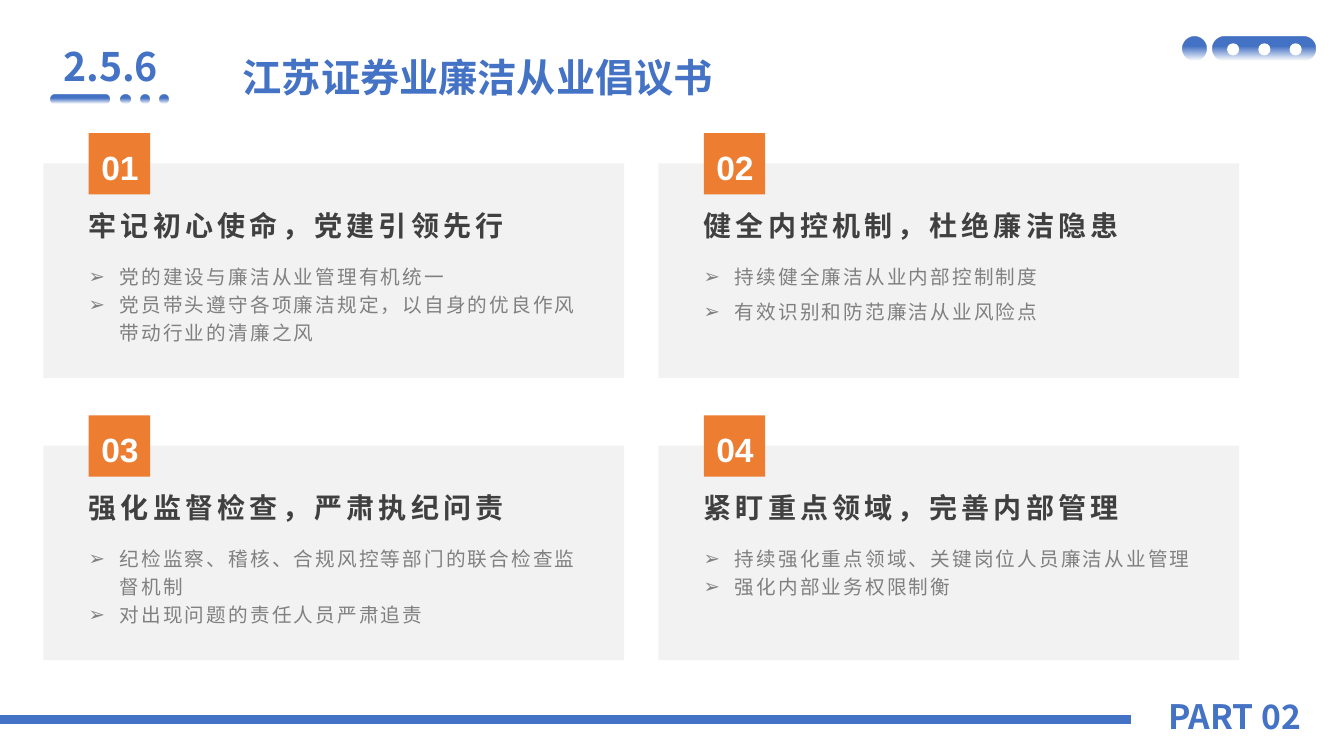
from lxml.etree import SubElement
from pptx import Presentation
from pptx.dml.color import RGBColor
from pptx.enum.shapes import MSO_CONNECTOR, MSO_SHAPE
from pptx.enum.text import MSO_ANCHOR, MSO_AUTO_SIZE, PP_ALIGN
from pptx.oxml.ns import qn
from pptx.util import Inches, Pt

BLUE = RGBColor(0x44, 0x72, 0xC4)
ORANGE = RGBColor(0xED, 0x7D, 0x31)
PALE = RGBColor(0xF2, 0xF2, 0xF2)
DARK = RGBColor(0x40, 0x40, 0x40)
GRAY = RGBColor(0x80, 0x80, 0x80)
WHITE = RGBColor(0xFF, 0xFF, 0xFF)
SANS = "Noto Sans CJK SC"

GROW = {"auto_size": MSO_AUTO_SIZE.SHAPE_TO_FIT_TEXT}
LOOSE = {**GROW, "word_wrap": False}
HEAD = {"vertical_anchor": MSO_ANCHOR.BOTTOM, "margin_bottom": 0}
BODY = {"margin_top": 0}
TIGHT = {"line_spacing": 1.1}
MID = {"line_spacing": 1.1, "alignment": PP_ALIGN.CENTER}
ITEM = {"line_spacing": 1.2}
LAST = {"line_spacing": 1.5, "space_after": Pt(10)}

CARDS = [
    ("牢记初心使命，党建引领先行",
     [("党的建设与廉洁从业管理有机统一", ITEM),
      ("党员带头遵守各项廉洁规定，以自身的优良作风带动行业的清廉之风", ITEM)]),
    ("健全内控机制，杜绝廉洁隐患",
     [("持续健全廉洁从业内部控制制度", ITEM),
      ("有效识别和防范廉洁从业风险点", LAST)]),
    ("强化监督检查，严肃执纪问责",
     [("纪检监察、稽核、合规风控等部门的联合检查监督机制", ITEM),
      ("对出现问题的责任人员严肃追责", ITEM)]),
    ("紧盯重点领域，完善内部管理",
     [("持续强化重点领域、关键岗位人员廉洁从业管理", ITEM),
      ("强化内部业务权限制衡", ITEM)]),
]


def apply(item, form):
    for name, value in form.items():
        setattr(item, name, value)


class Deck:
    """Draws styled elements on the current slide."""

    def __init__(self):
        self.show = Presentation()
        apply(self.show, {"slide_width": Inches(13.33), "slide_height": Inches(7.5)})
        self.slide = self.show.slides.add_slide(self.show.slide_layouts[6])

    def shape(self, kind, place, color=None):
        shape = self.slide.shapes.add_shape(kind, *map(Inches, place))
        shape.shadow.inherit = False
        shape.line.fill.background()
        if kind == MSO_SHAPE.ROUNDED_RECTANGLE:
            shape.adjustments[0] = 0.5
        if color is None:
            self.fade(shape)
        else:
            shape.fill.solid()
            shape.fill.fore_color.rgb = color

    def fade(self, shape):
        shape.fill.gradient()
        shape.fill.gradient_angle = 270
        for stop, spot in zip(shape.fill.gradient_stops, (0.4, 1)):
            stop.color.rgb = BLUE
            stop.position = spot
        tint = shape.fill._xPr.findall(".//" + qn("a:srgbClr"))[-1]
        SubElement(tint, qn("a:alpha"), val="0")

    def line(self, start, end, color, width):
        line = self.slide.shapes.add_connector(
            MSO_CONNECTOR.STRAIGHT, *map(Inches, start + end))
        line.line.color.rgb = color
        line.line.width = Pt(width)
        SubElement(line._element.spPr, qn("a:effectLst"))

    def text(self, place, lines, size, color, face="Arial", bold=True,
             frame={}, gap=0, mark=None):
        box = self.slide.shapes.add_textbox(*map(Inches, place)).text_frame
        apply(box, {"word_wrap": True, **frame})
        for rank, (words, form) in enumerate(lines):
            para = box.add_paragraph() if rank else box.paragraphs[0]
            apply(para, form)
            if mark:
                self.bullet(para, mark)
            run = para.add_run()
            run.text = words
            apply(run.font, {"size": Pt(size), "bold": bold, "name": face})
            run.font.color.rgb = color
            props = run._r.get_or_add_rPr()
            SubElement(props, qn("a:ea"), typeface=SANS)
            if gap:
                props.set("spc", str(int(gap * 100)))

    def bullet(self, para, mark):
        props = para._p.get_or_add_pPr()
        props.set("marL", str(Inches(0.31)))
        props.set("indent", str(-Inches(0.31)))
        SubElement(props, qn("a:buFont"), typeface="Arial")
        SubElement(props, qn("a:buChar"), char=mark)

    def card(self, left, top, label, head, items):
        self.shape(MSO_SHAPE.RECTANGLE, (left, top, 5.76, 2.13), PALE)
        self.shape(MSO_SHAPE.RECTANGLE, (left + 0.45, top - 0.3, 0.61, 0.61), ORANGE)
        self.text((left + 0.47, top - 0.25, 0.58, 0.54), [(label, MID)], 24, WHITE)
        self.text((left + 0.35, top + 0.96, 5.06, 1.06), items, 14, GRAY,
                  bold=False, frame=BODY, gap=1.5, mark="➢")
        self.text((left + 0.35, top + 0.36, 5.06, 0.42), [(head, TIGHT)], 20, DARK,
                  frame=HEAD, gap=3)


def main():
    deck = Deck()
    deck.shape(MSO_SHAPE.ROUNDED_RECTANGLE, (12.03, 0.36, 1.02, 0.24))
    for step in range(3):
        deck.shape(MSO_SHAPE.OVAL, (12.17 + step * 0.31, 0.43, 0.12, 0.12), WHITE)
    deck.shape(MSO_SHAPE.OVAL, (11.73, 0.36, 0.24, 0.24))
    deck.shape(MSO_SHAPE.ROUNDED_RECTANGLE, (0.5, 0.94, 0.59, 0.09))
    for step in range(3):
        deck.shape(MSO_SHAPE.OVAL, (1.2 + step * 0.19, 0.94, 0.09, 0.09))
    deck.line((0, 7.14), (11.22, 7.14), BLUE, 6)
    deck.text((11.49, 6.85, 1.53, 0.5), [("PART 02", {})], 24, BLUE, SANS, frame=LOOSE)
    deck.text((2.31, 0.48, 6.32, 0.57), [("江苏证券业廉洁从业倡议书", {})],
              28, BLUE, SANS, frame=GROW)
    deck.text((0.53, 0.37, 1.14, 0.57), [("2.5.6", {})], 28, BLUE, SANS, frame=LOOSE)
    for rank, (head, items) in enumerate(CARDS):
        row, col = divmod(rank, 2)
        deck.card(0.43 + col * 6.1, 1.62 + row * 2.8, f"{rank + 1:02}", head, items)
    deck.show.save("out.pptx")


if __name__ == "__main__":
    main()
